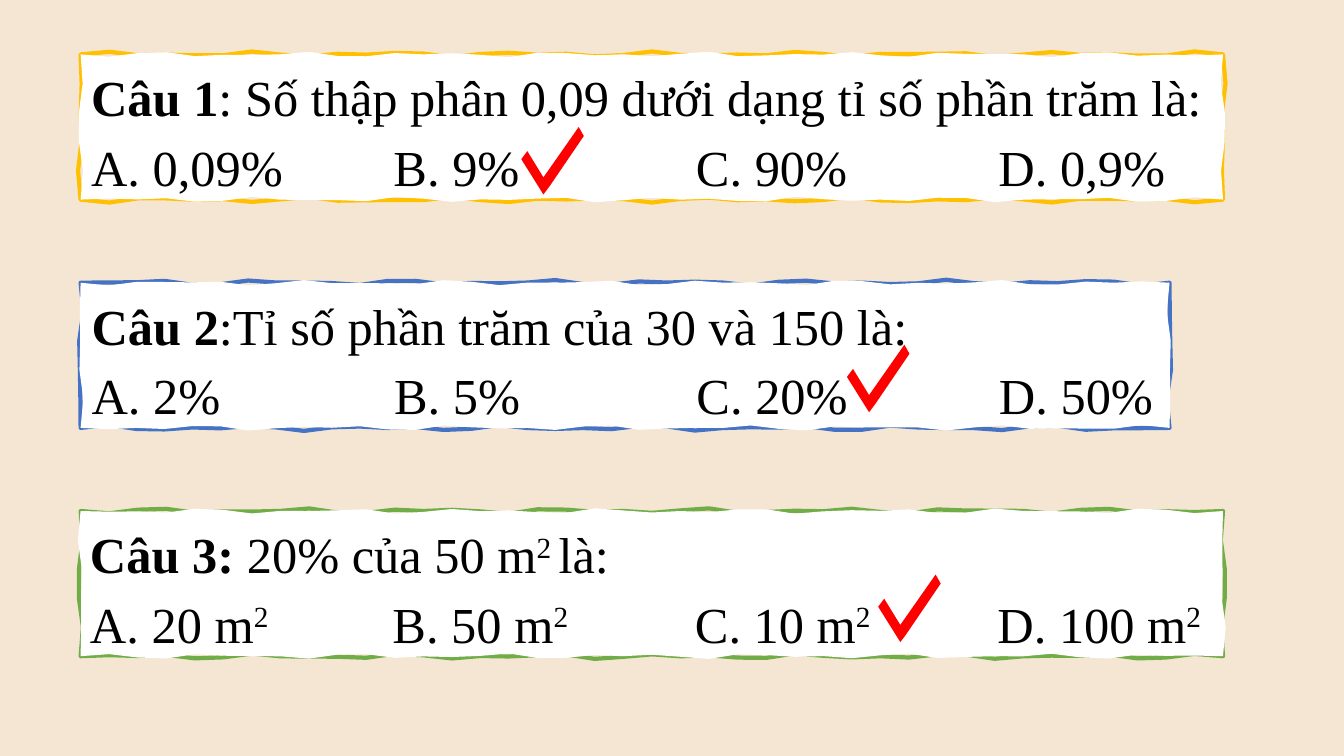
from dataclasses import dataclass
from math import cos, hypot, pi, sin

from lxml import etree
from pptx import Presentation
from pptx.dml.color import RGBColor
from pptx.enum.text import MSO_ANCHOR, PP_ALIGN
from pptx.oxml.ns import qn
from pptx.util import Inches, Pt

JUSTIFY = PP_ALIGN.JUSTIFY
MIDDLE = MSO_ANCHOR.MIDDLE


@dataclass(frozen=True)
class Theme:
    background: str = "F5E6D3"
    paper: str = "FFFFFF"
    text: str = "000000"
    check: str = "FF0000"
    borders: tuple = ("FFC000", "4472C4", "70AD47")
    font: str = "Times New Roman"
    size: int = 36
    border_width: int = 3


theme = Theme()

CARD_LEFT, CARD_HEIGHT = 0.8, 1.44
CARD_TOP, CARD_PITCH = 0.54, 2.265
ANSWER_PITCH = 3
WAVE_DEPTH, WAVE_STEP = 0.03, 0.28
CHECK = [(0.57, 0), (0.22, 0.5), (0.06, 0.24), (0, 0.32),
         (0.22, 0.67), (0.28, 0.59), (0.62, 0.09)]

# Width, label, question, answers, check position; ^ switches superscript on and off
questions = [
    (11.33, "Câu 1", ": Số thập phân 0,09 dưới dạng tỉ số phần trăm là:",
     ["A. 0,09%", "B. 9%", "C. 90%", "D. 0,9%"], (5.17, 1.26)),
    (10.8, "Câu 2", ":Tỉ số phần trăm của 30 và 150 là:",
     ["A. 2%", "B. 5%", "C. 20%", "D. 50%"], (8.4, 3.42)),
    (11.33, "Câu 3:", " 20% của 50 m^2 ^là:",
     ["A. 20 m^2^", "B. 50 m^2^", "C. 10 m^2^", "D. 100 m^2^"], (8.71, 5.7)),
]


def add_outline(points, fill=None, line=None):
    """Draw a closed freeform through points given in inches."""
    corners = [(Inches(x), Inches(y)) for x, y in points]
    builder = slide.shapes.build_freeform(*corners[0])
    builder.add_line_segments(corners[1:], close=True)
    shape = builder.convert_to_shape()
    shape.shadow.inherit = False
    for part, color in ((shape.fill, fill), (shape.line.fill, line)):
        if color:
            part.solid()
            part.fore_color.rgb = RGBColor.from_string(color)
        else:
            part.background()
    return shape


def add_text(paragraph, text, bold=False):
    """Add runs to the paragraph, raising the parts between ^ marks."""
    for index, piece in enumerate(text.split("^")):
        if not piece:
            continue
        run = paragraph.add_run()
        run.text = piece
        run.font.name = theme.font
        run.font.size = Pt(theme.size)
        run.font.bold = bold
        run.font.color.rgb = RGBColor.from_string(theme.text)
        if index % 2:
            run.font._element.set("baseline", "30000")


presentation = Presentation()
presentation.slide_width = Inches(13.33)
presentation.slide_height = Inches(7.5)
slide = presentation.slides.add_slide(presentation.slide_layouts[6])
slide.background.fill.solid()
slide.background.fill.fore_color.rgb = RGBColor.from_string(theme.background)

for row, (width, label, question, answers, check) in enumerate(questions):
    top = CARD_TOP + row * CARD_PITCH
    right, bottom = CARD_LEFT + width, top + CARD_HEIGHT
    corners = [(CARD_LEFT, top), (right, top), (right, bottom), (CARD_LEFT, bottom)]

    # The border and the paper over it follow two different waves
    waves = []
    for phase in (row, row + 2):
        points = []
        for (x, y), (end_x, end_y) in zip(corners, corners[1:] + corners[:1]):
            length = hypot(end_x - x, end_y - y)
            along_x, along_y = (end_x - x) / length, (end_y - y) / length
            steps = round(length / WAVE_STEP)
            for step in range(steps):
                distance = length * step / steps
                swing = sin(pi * round(2 * length) * step / steps)
                offset = WAVE_DEPTH * swing * cos(1.7 * distance + phase)
                points.append((x + along_x * distance + along_y * offset,
                               y + along_y * distance - along_x * offset))
        waves.append(points)
    border_wave, paper_wave = waves
    add_outline(border_wave, line=theme.borders[row]).line.width = Pt(theme.border_width)
    card = add_outline(paper_wave, fill=theme.paper)

    frame = card.text_frame
    frame.word_wrap = True
    frame.vertical_anchor = MIDDLE
    frame.margin_left = Inches(0.12)
    frame.margin_right = frame.margin_top = frame.margin_bottom = Inches(0.05)
    question_line, answer_line = frame.paragraphs[0], frame.add_paragraph()
    for paragraph in (question_line, answer_line):
        paragraph.alignment = JUSTIFY
        paragraph.line_spacing = 1.15
    add_text(question_line, label, bold=True)
    add_text(question_line, question)
    add_text(answer_line, "\t".join(answers))

    tab_list = etree.SubElement(answer_line._p.get_or_add_pPr(), qn("a:tabLst"))
    for column in range(1, len(answers)):
        position = str(Inches(column * ANSWER_PITCH))
        etree.SubElement(tab_list, qn("a:tab"), pos=position, algn="l")

    check_left, check_top = check
    add_outline([(check_left + x, check_top + y) for x, y in CHECK], fill=theme.check)

presentation.save("out.pptx")
